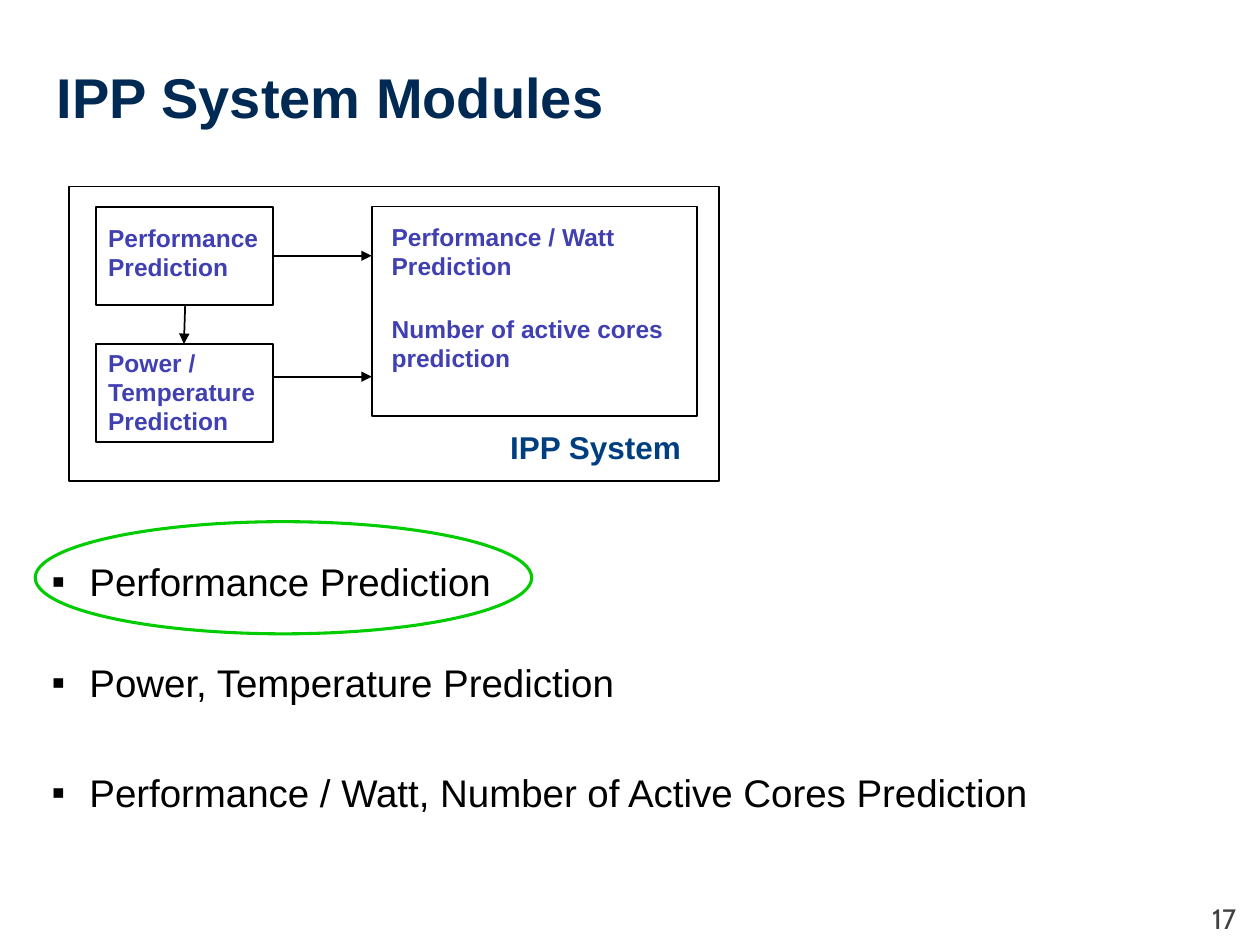
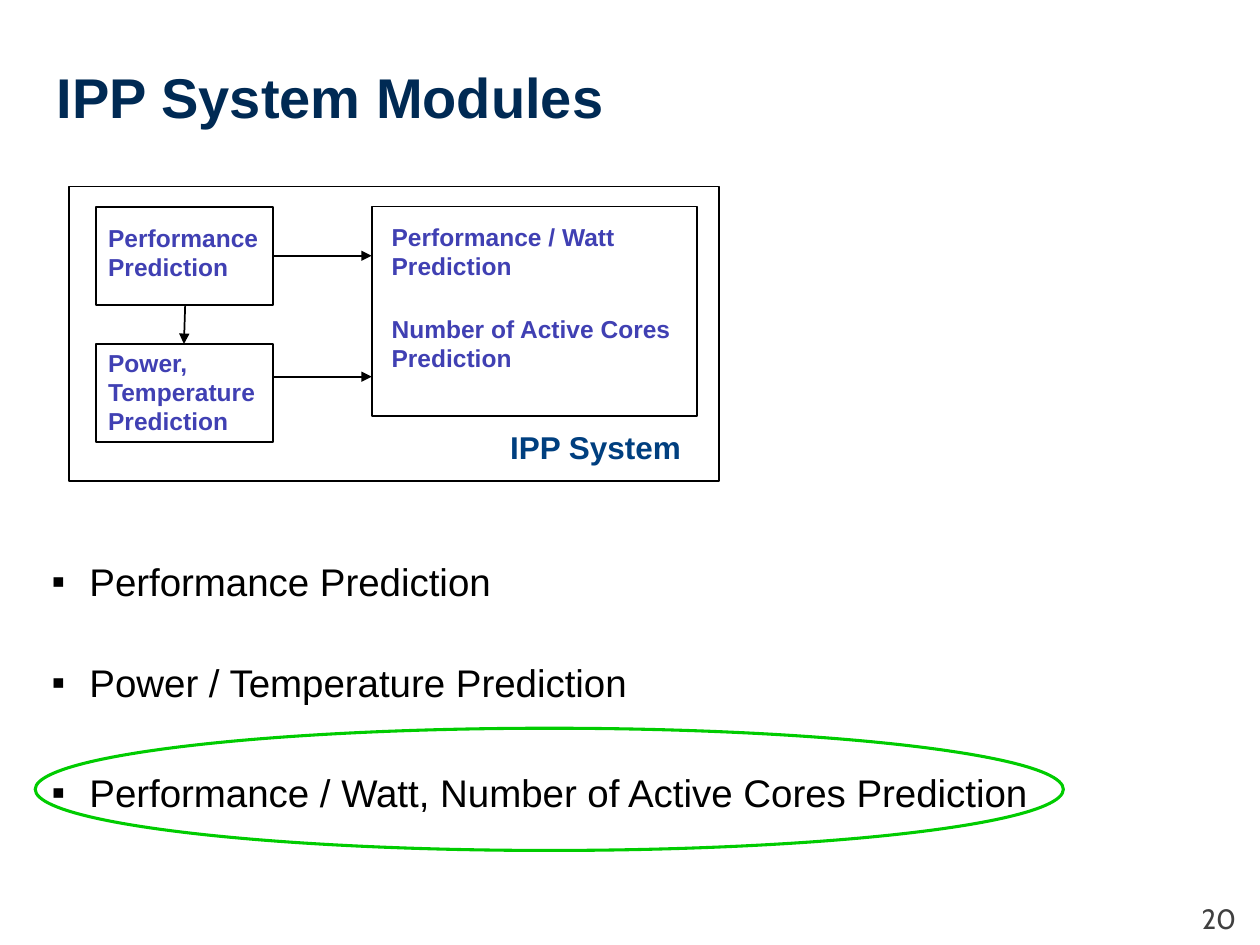
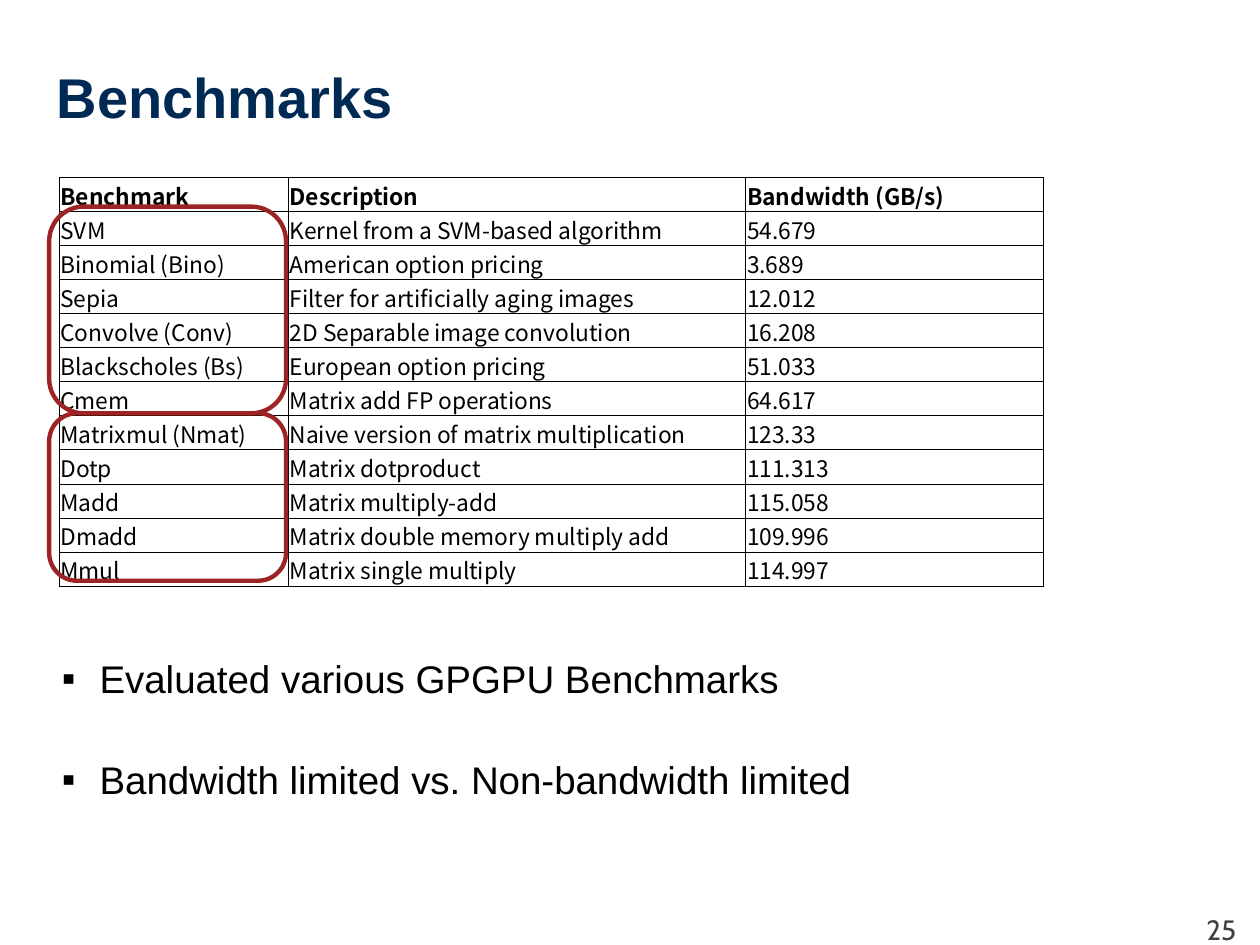
import pptx
import pptx.dml.color
import pptx.enum.shapes
import pptx.enum.text
import pptx.oxml
import pptx.oxml.ns
import pptx.util
import lxml.etree

Inches = pptx.util.Inches
Pt = pptx.util.Pt
Shape = pptx.enum.shapes.MSO_SHAPE
Align = pptx.enum.text.PP_ALIGN
Anchor = pptx.enum.text.MSO_ANCHOR

COLORS = {
    "title": "002A54",
    "body": "000000",
    "module": "4040B3",
    "system": "003F7F",
    "number": "404040",
    "highlight": "00CC00",
    "group": "9C2424",
}

BENCHMARKS = [
    ("Benchmark", "Description", "Bandwidth (GB/s)"),
    ("SVM", "Kernel from a SVM-based algorithm", "54.679"),
    ("Binomial (Bino)", "American option pricing", "3.689"),
    ("Sepia", "Filter for artificially aging images", "12.012"),
    ("Convolve (Conv)", "2D Separable image convolution", "16.208"),
    ("Blackscholes (Bs)", "European option pricing", "51.033"),
    ("Cmem", "Matrix add FP operations", "64.617"),
    ("Matrixmul (Nmat)", "Naive version of matrix multiplication", "123.33"),
    ("Dotp", "Matrix dotproduct", "111.313"),
    ("Madd", "Matrix multiply-add", "115.058"),
    ("Dmadd", "Matrix double memory multiply add", "109.996"),
    ("Mmul", "Matrix single multiply", "114.997"),
]


def color(name):
    return pptx.dml.color.RGBColor.from_string(COLORS[name])


def add_element(parent, tag, **attributes):
    return lxml.etree.SubElement(parent, pptx.oxml.ns.qn(tag), **attributes)


class SlideBuilder:
    def __init__(self, deck):
        self.deck = deck
        self.page = None

    def start(self, title, number, number_top=7.11):
        self.page = self.deck.slides.add_slide(self.deck.slide_layouts[1])
        box = self.page.shapes.title
        self.place(box, 0.35, 0.35, 9, 0.83)
        box.text_frame.vertical_anchor = Anchor.MIDDLE
        self.fill_frame(box.text_frame, title, 32, "title", bold=True)
        self.text(str(number), 9.25, number_top, 0.66, 0.17, 16, "number",
                  font="Cabin", align=Align.RIGHT)

    def place(self, box, left, top, width, height):
        box.left, box.top = Inches(left), Inches(top)
        box.width, box.height = Inches(width), Inches(height)

    def style(self, para, size, ink, bold=False, font="Arial", align=Align.LEFT):
        para.alignment = align
        para.font.name = font
        para.font.size = Pt(size)
        para.font.bold = bold
        para.font.color.rgb = color(ink)

    def fill_frame(self, frame, words, size, ink, **options):
        frame.text = words
        frame.word_wrap = True
        frame.auto_size = pptx.enum.text.MSO_AUTO_SIZE.NONE
        for para in frame.paragraphs:
            self.style(para, size, ink, **options)

    def text(self, words, left, top, width, height, size, ink, **options):
        box = self.page.shapes.add_textbox(
            Inches(left), Inches(top), Inches(width), Inches(height))
        self.fill_frame(box.text_frame, words, size, ink, **options)

    def bullets(self, items, left, top, width, height, gaps):
        box = self.page.placeholders[1]
        self.place(box, left, top, width, height)
        frame = box.text_frame
        frame.text = "\n".join(items)
        frame.vertical_anchor = Anchor.TOP
        frame.auto_size = pptx.enum.text.MSO_AUTO_SIZE.NONE
        for para, gap in zip(frame.paragraphs, (0, *gaps)):
            para.space_before = Pt(gap)
            properties = para._p.get_or_add_pPr()
            properties.set("marL", str(Inches(0.3)))
            properties.set("indent", str(-Inches(0.3)))
            add_element(properties, "a:buFont", typeface="Arial")
            add_element(properties, "a:buChar", char="▪")
            self.style(para, 22, "body")

    def outline(self, kind, left, top, width, height, ink="body", weight=1):
        shape = self.page.shapes.add_shape(
            kind, Inches(left), Inches(top), Inches(width), Inches(height))
        shape.shadow.inherit = False
        shape.fill.background()
        shape.line.color.rgb = color(ink)
        shape.line.width = Pt(weight)

    def arrow(self, start_x, start_y, end_x, end_y):
        connector = self.page.shapes.add_connector(
            pptx.enum.shapes.MSO_CONNECTOR.STRAIGHT,
            Inches(start_x), Inches(start_y), Inches(end_x), Inches(end_y))
        connector.line.color.rgb = color("body")
        connector.line.width = Pt(1)
        properties = connector._element.spPr
        add_element(properties.find(pptx.oxml.ns.qn("a:ln")), "a:tailEnd", type="triangle")
        add_element(properties, "a:effectLst")

    def table(self, rows, left, top, widths, height):
        table = self.page.shapes.add_table(
            len(rows), len(widths), Inches(left), Inches(top),
            Inches(sum(widths)), Inches(height)).table
        table.first_row = False
        table.horz_banding = False
        for column, width in zip(table.columns, widths):
            column.width = Inches(width)
        for row_index, row in enumerate(rows):
            for column_index, words in enumerate(row):
                self.cell(table.cell(row_index, column_index), words, row_index == 0)

    def cell(self, cell, words, bold):
        cell.text = words
        cell.vertical_anchor = Anchor.MIDDLE
        cell.margin_left = cell.margin_right = cell.margin_top = Inches(0.01)
        cell.margin_bottom = 0
        properties = cell._tc.get_or_add_tcPr()
        for side in "LRTB":
            border = add_element(properties, f"a:ln{side}", w=str(Pt(0.5)))
            fill = add_element(border, "a:solidFill")
            add_element(fill, "a:srgbClr", val=COLORS["body"])
        cell.fill.background()
        self.style(cell.text_frame.paragraphs[0], 13, "body", bold=bold,
                   font="Noto Sans CJK KR")

    def system_diagram(self, power, cores):
        self.outline(Shape.RECTANGLE, 0.55, 1.48, 5.16, 2.34)
        for top in (1.64, 2.73):
            self.outline(Shape.RECTANGLE, 0.76, top, 1.41, 0.78)
        self.outline(Shape.RECTANGLE, 2.95, 1.64, 2.58, 1.66)
        labels = [
            ("Performance Prediction", 0.76, 1.72, 1.41, 0.57),
            (power + "\nPrediction", 0.76, 2.71, 1.41, 0.81),
            ("Performance / Watt Prediction", 3.01, 1.71, 2.19, 0.57),
            (cores, 3.01, 2.44, 2.5, 0.57),
        ]
        for label in labels:
            self.text(*label, 14, "module", bold=True)
        self.text("IPP System", 3.95, 3.35, 1.6, 0.4, 18, "system", bold=True)
        self.arrow(1.47, 2.42, 1.46, 2.73)
        for arrow_top in (2.03, 2.99):
            self.arrow(2.17, arrow_top, 2.95, arrow_top)

    def modules_slide(self, number, power, cores, power_bullet, highlight):
        self.start("IPP System Modules", number)
        self.system_diagram(power, cores)
        self.bullets(
            ["Performance Prediction", power_bullet,
             "Performance / Watt, Number of Active Cores Prediction"],
            0.31, 4.38, 8.36, 2.1, (31, 36.5))
        self.outline(Shape.OVAL, *highlight, "highlight", 1.75)

    def benchmarks_slide(self):
        self.start("Benchmarks", 25, number_top=7.19)
        self.table(BENCHMARKS, 0.47, 1.41, (1.82, 3.63, 2.36), 3.2)
        self.bullets(
            ["Evaluated various GPGPU Benchmarks",
             "Bandwidth limited vs. Non-bandwidth limited"],
            0.39, 5.15, 9.06, 1.26, (31,))
        for top, height in ((3.28, 1.33), (1.64, 1.64)):
            self.outline(Shape.ROUNDED_RECTANGLE, 0.39, top, 1.88, height, "group", 2.5)


def main():
    deck = pptx.Presentation()
    deck.slide_width, deck.slide_height = Inches(10), Inches(7.5)
    builder = SlideBuilder(deck)
    builder.modules_slide(
        17, "Power / Temperature", "Number of active cores prediction",
        "Power, Temperature Prediction", (0.28, 4.14, 3.94, 0.89))
    builder.modules_slide(
        20, "Power, Temperature", "Number of Active Cores Prediction",
        "Power / Temperature Prediction", (0.28, 5.78, 8.16, 0.97))
    builder.benchmarks_slide()
    deck.save("out.pptx")


if __name__ == "__main__":
    main()
